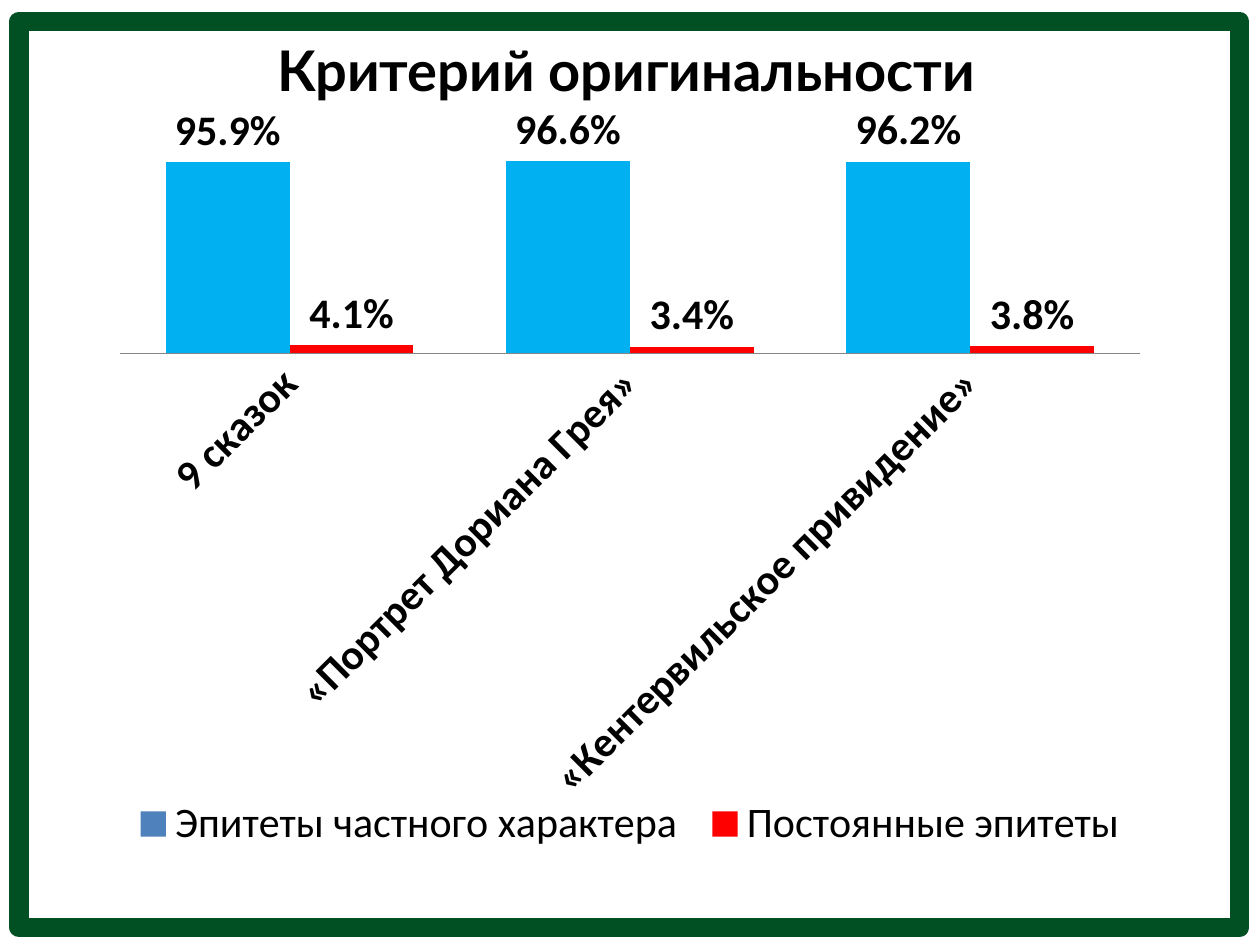
from lxml import etree
from pptx import Presentation
from pptx.chart.data import CategoryChartData
from pptx.dml.color import RGBColor
from pptx.enum.chart import XL_CHART_TYPE, XL_LABEL_POSITION, XL_LEGEND_POSITION, XL_TICK_MARK
from pptx.enum.shapes import MSO_SHAPE
from pptx.enum.text import MSO_ANCHOR, PP_ALIGN
from pptx.oxml.ns import qn
from pptx.util import Inches, Pt

COLUMNS = XL_CHART_TYPE.COLUMN_CLUSTERED
OUTSIDE_END = XL_LABEL_POSITION.OUTSIDE_END
BOTTOM = XL_LEGEND_POSITION.BOTTOM
NO_TICKS = XL_TICK_MARK.NONE
RECTANGLE = MSO_SHAPE.RECTANGLE
MIDDLE = MSO_ANCHOR.MIDDLE
CENTER = PP_ALIGN.CENTER

COLORS = {
    "text": "000000",
    "frame": "005024",
    "individual": "4F81BD",
    "individual_bar": "00B0F0",
    "fixed": "FF0000",
    "axis": "868686",
}
PERCENT = "0.0%"
CATEGORIES = ["9 сказок", "«Портрет Дориана Грея»", "«Кентервильское привидение»"]
# name, values, series colour, colour of the single bars
SERIES = [
    ("Эпитеты частного характера", (0.959, 0.966, 0.962), "individual", "individual_bar"),
    ("Постоянные эпитеты", (0.041, 0.034, 0.038), "fixed", None),
]


def rgb(name):
    return RGBColor.from_string(COLORS[name])


def fill(fmt, color):
    fmt.fill.solid()
    fmt.fill.fore_color.rgb = rgb(color)


def set_font(font, size, name="Calibri", bold=False, color="text"):
    font.size = Pt(size)
    font.name = name
    font.bold = bold
    font.color.rgb = rgb(color)


def write_text(tf, text, align=CENTER, anchor=MIDDLE, **font):
    tf.word_wrap = True
    tf.vertical_anchor = anchor
    p = tf.paragraphs[0]
    p.alignment = align
    r = p.add_run()
    r.text = text
    set_font(r.font, **font)


def add_title(s, text):
    title = s.shapes.title
    title.left, title.top = Inches(0.47), Inches(0)
    title.width, title.height = Inches(9), Inches(1.09)
    write_text(title.text_frame, text, size=32, name="Lato", bold=True)


def add_frame(s):
    frame = s.shapes.add_shape(RECTANGLE, Inches(0.15), Inches(0.17), Inches(9.69), Inches(7.19))
    frame.shadow.inherit = False
    frame.fill.background()
    frame.line.color.rgb = rgb("frame")
    frame.line.width = Pt(11)


def set_layout(parent, index, x, y, w, h, inner=False):
    """Place a chart part by fractions of the chart's width and height."""
    for old in parent.findall(qn("c:layout")):
        parent.remove(old)
    layout = etree.Element(qn("c:layout"))
    manual = etree.SubElement(layout, qn("c:manualLayout"))
    values = {"layoutTarget": "inner"} if inner else {}
    values.update(xMode="edge", yMode="edge", x=x, y=y, w=w, h=h)
    for tag, value in values.items():
        etree.SubElement(manual, qn(f"c:{tag}")).set("val", str(value))
    parent.insert(index, layout)


def format_axes(chart):
    values = chart.value_axis
    values.visible = False
    values.has_major_gridlines = False
    values.minimum_scale, values.maximum_scale = 0, 1.2
    values.tick_labels.number_format = PERCENT
    values.tick_labels.number_format_is_linked = False

    cats = chart.category_axis
    cats.major_tick_mark = NO_TICKS
    cats.minor_tick_mark = NO_TICKS
    cats.format.line.color.rgb = rgb("axis")
    cats.format.line.width = Pt(0.75)
    set_font(cats.tick_labels.font, 24, bold=True)
    body = cats._element.find("{*}txPr/{*}bodyPr")
    body.set("rot", "-2700000")  # 45 degrees, rising to the right
    body.set("vert", "horz")


def format_series(series, color, bar_color):
    fill(series.format, color)
    series.invert_if_negative = False
    if bar_color:
        for i in range(len(CATEGORIES)):
            fill(series.points[i].format, bar_color)
    labels = series.data_labels
    labels.show_value = True
    labels.number_format = PERCENT
    labels.number_format_is_linked = False
    labels.position = OUTSIDE_END
    set_font(labels.font, 24, bold=True)


def add_epithet_chart(s):
    data = CategoryChartData(number_format=PERCENT)
    data.categories = CATEGORIES
    for name, values, *_ in SERIES:
        data.add_series(name, values)
    chart = s.shapes.add_chart(
        COLUMNS, Inches(0.78), Inches(0.78), Inches(8.44), Inches(6.33), data
    ).chart
    set_font(chart.font, 18)
    chart.has_title = False
    chart.has_legend = True
    chart.legend.position = BOTTOM
    chart.legend.include_in_layout = False
    set_font(chart.legend.font, 24)
    format_axes(chart)
    set_layout(chart.legend._element, 1, 0.02, 0.87, 0.96, 0.08)
    set_layout(chart._chartSpace.chart.plotArea, 0, 0.02, 0.02, 0.96, 0.3, inner=True)

    plot = chart.plots[0]
    plot.gap_width = 75
    plot.overlap = 0
    plot.vary_by_categories = False
    for series, (_, _, color, bar_color) in zip(plot.series, SERIES):
        format_series(series, color, bar_color)


def main():
    prs = Presentation()
    prs.slide_width, prs.slide_height = Inches(10), Inches(7.5)
    s = prs.slides.add_slide(prs.slide_layouts[5])
    add_title(s, "Критерий оригинальности")
    add_frame(s)
    add_epithet_chart(s)
    prs.save("out.pptx")


if __name__ == "__main__":
    main()
